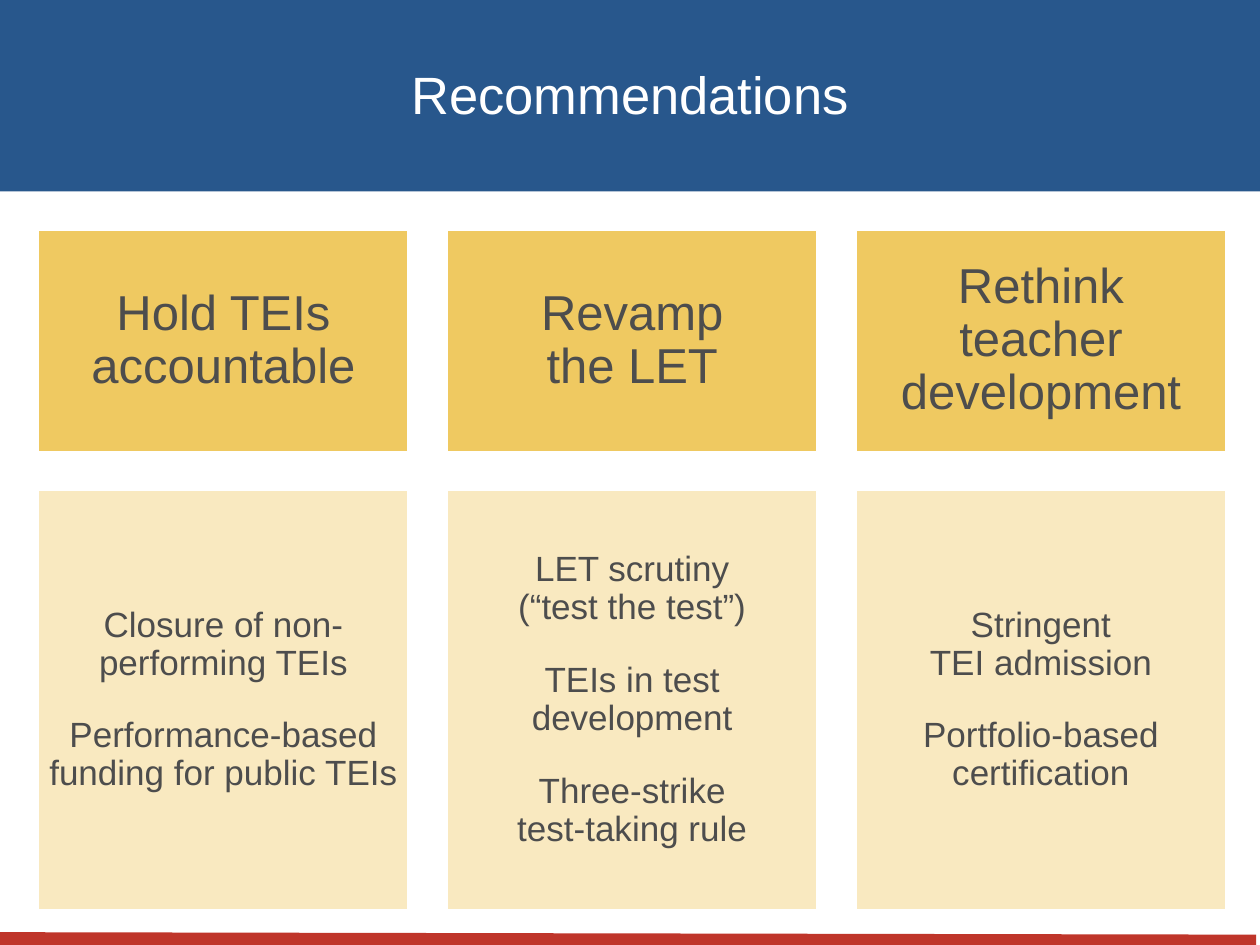
from dataclasses import dataclass

import pptx
import pptx.dml.color
import pptx.enum.shapes
import pptx.enum.text
import pptx.oxml
import pptx.util
from pptx.util import Cm


@dataclass(frozen=True)
class Theme:
    """Colours, font and type sizes of the slide."""
    banner: str = "28578C"
    heading_fill: str = "EFC961"
    detail_fill: str = "F9E9C0"
    accent: str = "BF352A"
    light: str = "FFFFFF"
    ink: str = "4D4D4D"
    font: str = "Arial"
    title_size: int = 30
    heading_size: int = 28
    detail_size: int = 20


THEME = Theme()
LEFT, CARD_WIDTH, COLUMN_PITCH = 0.76, 7.49, 8.24
HEADING_TOP, HEADING_HEIGHT = 4.62, 4.5
DETAIL_TOP, DETAIL_HEIGHT = 9.86, 8.51

RECOMMENDATIONS = [
    (["Hold TEIs", "accountable"],
     [["Closure of non-performing TEIs"],
      ["Performance-based funding for public TEIs"]]),
    (["Revamp", "the LET"],
     [["LET scrutiny", "(“test the test”)"],
      ["TEIs in test development"],
      ["Three-strike", "test-taking rule"]]),
    (["Rethink", "teacher development"],
     [["Stringent", "TEI admission"],
      ["Portfolio-based certification"]]),
]


def colour(value):
    """Turn a hex string into a colour."""
    return pptx.dml.color.RGBColor.from_string(value)


def format_paragraph(paragraph, size, text_colour):
    """Centre a paragraph and set the font of its runs."""
    paragraph.alignment = pptx.enum.text.PP_ALIGN.CENTER
    for run in paragraph.runs:
        run.font.name = THEME.font
        run.font.size = pptx.util.Pt(size)
        run.font.color.rgb = colour(text_colour)


def fill_shape(shape, value):
    """Give a shape a solid fill."""
    shape.fill.solid()
    shape.fill.fore_color.rgb = colour(value)


def add_title(slide, text):
    """Turn the title placeholder into the banner."""
    title = slide.shapes.title
    title.left, title.top, title.width, title.height = Cm(0), Cm(-0.08), Cm(25.4), Cm(3.94)
    fill_shape(title, THEME.banner)
    text_frame = title.text_frame
    text_frame.text = text
    text_frame.auto_size = pptx.enum.text.MSO_AUTO_SIZE.NONE
    text_frame.vertical_anchor = pptx.enum.text.MSO_ANCHOR.MIDDLE
    format_paragraph(text_frame.paragraphs[0], THEME.title_size, THEME.light)


def add_card(slide, left, top, height, groups, fill, size, inset):
    """Add a filled card whose groups of lines are set apart by spacing."""
    card = slide.shapes.add_shape(
        pptx.enum.shapes.MSO_SHAPE.RECTANGLE, Cm(left), Cm(top), Cm(CARD_WIDTH), Cm(height))
    card.shadow.inherit = False
    fill_shape(card, fill)
    card.line.color.rgb = colour(THEME.light)
    card.line.width = pptx.util.Pt(2)
    text_frame = card.text_frame
    text_frame.word_wrap = True
    text_frame.vertical_anchor = pptx.enum.text.MSO_ANCHOR.MIDDLE
    text_frame.margin_left = text_frame.margin_right = Cm(inset)
    text_frame.margin_top = text_frame.margin_bottom = Cm(inset)
    text_frame.text = "\n".join(line for group in groups for line in group)
    paragraphs = iter(text_frame.paragraphs)
    for group_index, group in enumerate(groups):
        for line_index in range(len(group)):
            paragraph = next(paragraphs)
            format_paragraph(paragraph, size, THEME.ink)
            paragraph.line_spacing = 0.9
            if group_index and line_index == 0:
                paragraph.space_before = pptx.util.Pt(size)


def add_footer_line(slide):
    """Draw the thick accent line along the bottom edge."""
    line = slide.shapes.add_connector(
        pptx.enum.shapes.MSO_CONNECTOR.STRAIGHT, Cm(-0.1), Cm(18.95), Cm(25.32), Cm(19))
    line.line.color.rgb = colour(THEME.accent)
    line.line.width = pptx.util.Pt(9)
    properties = line._element.spPr
    properties.append(pptx.oxml.parse_xml(
        '<a:effectLst xmlns:a="http://schemas.openxmlformats.org/drawingml/2006/main"/>'))


def main():
    """Build and save the recommendations slide."""
    presentation = pptx.Presentation()
    presentation.slide_width, presentation.slide_height = Cm(25.4), Cm(19.05)
    slide = presentation.slides.add_slide(presentation.slide_layouts.get_by_name("Title Only"))
    add_title(slide, "Recommendations")
    for column, (heading, details) in enumerate(RECOMMENDATIONS):
        left = LEFT + column * COLUMN_PITCH
        add_card(slide, left, HEADING_TOP, HEADING_HEIGHT, [heading],
                 THEME.heading_fill, THEME.heading_size, 0.3)
        add_card(slide, left, DETAIL_TOP, DETAIL_HEIGHT, details,
                 THEME.detail_fill, THEME.detail_size, 0.2)
    add_footer_line(slide)
    presentation.save("out.pptx")


if __name__ == "__main__":
    main()
